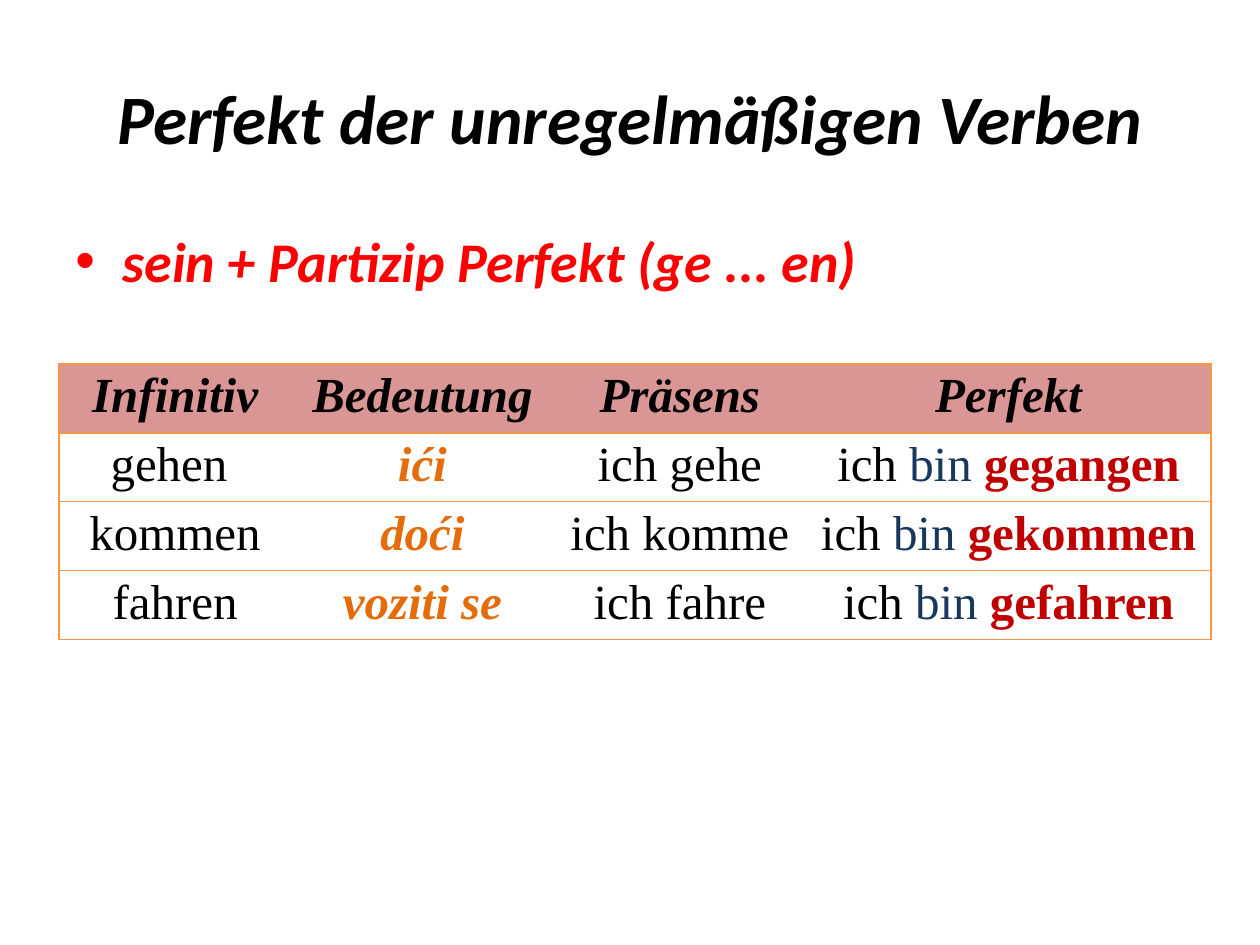
from dataclasses import dataclass

from lxml import etree
from pptx import Presentation
from pptx.dml.color import RGBColor
from pptx.enum.text import MSO_ANCHOR, MSO_AUTO_SIZE, PP_ALIGN
from pptx.oxml.ns import qn
from pptx.util import Cm, Pt

CENTER = PP_ALIGN.CENTER
MIDDLE = MSO_ANCHOR.MIDDLE
NO_AUTOFIT = MSO_AUTO_SIZE.NONE
TITLE_ONLY = 5

COLORS = {
    "black": "000000",
    "rule": "FF0000",
    "header": "D99694",
    "border": "F79646",
    "meaning": "E46C0A",
    "auxiliary": "17375E",
    "participle": "C00000",
}
COLUMN_WIDTHS = [4.68, 5.29, 5.09, 8.16]
ROW_HEIGHT = 1.35
HEADERS = ["Infinitiv", "Bedeutung", "Präsens", "Perfekt"]


@dataclass
class TextRun:
    text: str
    color: str = "black"
    bold: bool = False
    italic: bool = False


@dataclass
class Verb:
    infinitive: str
    meaning: str
    present: str
    participle: str

    def cells(self) -> list[list[TextRun]]:
        return [
            [TextRun(self.infinitive)],
            [TextRun(self.meaning, "meaning", True, True)],
            [TextRun(self.present)],
            [TextRun("ich "), TextRun("bin ", "auxiliary"),
             TextRun(self.participle, "participle", True)],
        ]


VERBS = [
    Verb("gehen ", "ići", "ich gehe", "gegangen"),
    Verb("kommen", "doći", "ich komme", "gekommen"),
    Verb("fahren", "voziti se", "ich fahre", "gefahren"),
]


def add_runs(paragraph, runs: list[TextRun], font_name: str, size: float) -> None:
    for item in runs:
        run = paragraph.add_run()
        run.text = item.text
        run.font.name = font_name
        run.font.size = Pt(size)
        run.font.bold = item.bold
        run.font.italic = item.italic
        run.font.color.rgb = RGBColor.from_string(COLORS[item.color])


def set_borders(cell, visible_sides: str) -> None:
    """Draw the named sides (L, R, T, B) and clear the others."""
    properties = cell._tc.get_or_add_tcPr()
    for index, side in enumerate("LRTB"):
        line = etree.Element(qn(f"a:ln{side}"), w=str(Pt(1)))
        if side in visible_sides:
            fill = etree.SubElement(line, qn("a:solidFill"))
            etree.SubElement(fill, qn("a:srgbClr"), val=COLORS["border"])
        else:
            etree.SubElement(line, qn("a:noFill"))
        properties.insert(index, line)


def add_title(slide, text: str) -> None:
    title = slide.shapes.title
    title.left, title.top, title.width, title.height = Cm(1.27), Cm(0.76), Cm(22.86), Cm(3.18)
    frame = title.text_frame
    frame.auto_size = NO_AUTOFIT
    frame.vertical_anchor = MIDDLE
    paragraph = frame.paragraphs[0]
    paragraph.alignment = CENTER
    add_runs(paragraph, [TextRun(text, "black", True, True)], "Calibri", 39.6)


def add_bullet_text(slide, text: str) -> None:
    box = slide.shapes.add_textbox(Cm(1.27), Cm(4.45), Cm(22.86), Cm(12.57))
    box.text_frame.word_wrap = True
    paragraph = box.text_frame.paragraphs[0]
    properties = paragraph._p.get_or_add_pPr()
    properties.set("marL", str(Cm(0.95)))
    properties.set("indent", str(-Cm(0.95)))
    etree.SubElement(properties, qn("a:buFont"), typeface="Arial")
    etree.SubElement(properties, qn("a:buChar"), char="•")
    add_runs(paragraph, [TextRun(text, "rule", True, True)], "Calibri", 32)


def add_verb_table(slide) -> None:
    rows = [[[TextRun(header, "black", True, True)] for header in HEADERS]]
    rows += [verb.cells() for verb in VERBS]
    table = slide.shapes.add_table(
        len(rows), len(HEADERS), Cm(1.19), Cm(7.34),
        Cm(sum(COLUMN_WIDTHS)), Cm(ROW_HEIGHT * len(rows)),
    ).table
    table.horz_banding = False
    for column, width in zip(table.columns, COLUMN_WIDTHS):
        column.width = Cm(width)
    for row_index, row in enumerate(rows):
        table.rows[row_index].height = Cm(ROW_HEIGHT)
        for column_index, runs in enumerate(row):
            cell = table.cell(row_index, column_index)
            cell.margin_left = cell.margin_right = Cm(0.19)
            cell.margin_top = cell.margin_bottom = Cm(0.1)
            if row_index == 0:
                cell.fill.solid()
                cell.fill.fore_color.rgb = RGBColor.from_string(COLORS["header"])
            else:
                cell.fill.background()
            outer_side = {0: "L", len(row) - 1: "R"}.get(column_index, "")
            set_borders(cell, "TB" + outer_side)
            paragraph = cell.text_frame.paragraphs[0]
            paragraph.alignment = CENTER
            add_runs(paragraph, runs, "Times New Roman", 28)


def main() -> None:
    presentation = Presentation()
    presentation.slide_width, presentation.slide_height = Cm(25.4), Cm(19.05)
    slide = presentation.slides.add_slide(presentation.slide_layouts[TITLE_ONLY])
    add_title(slide, "Perfekt der unregelmäßigen Verben")
    add_bullet_text(slide, "sein + Partizip Perfekt (ge ... en)")
    add_verb_table(slide)
    presentation.save("out.pptx")


if __name__ == "__main__":
    main()
